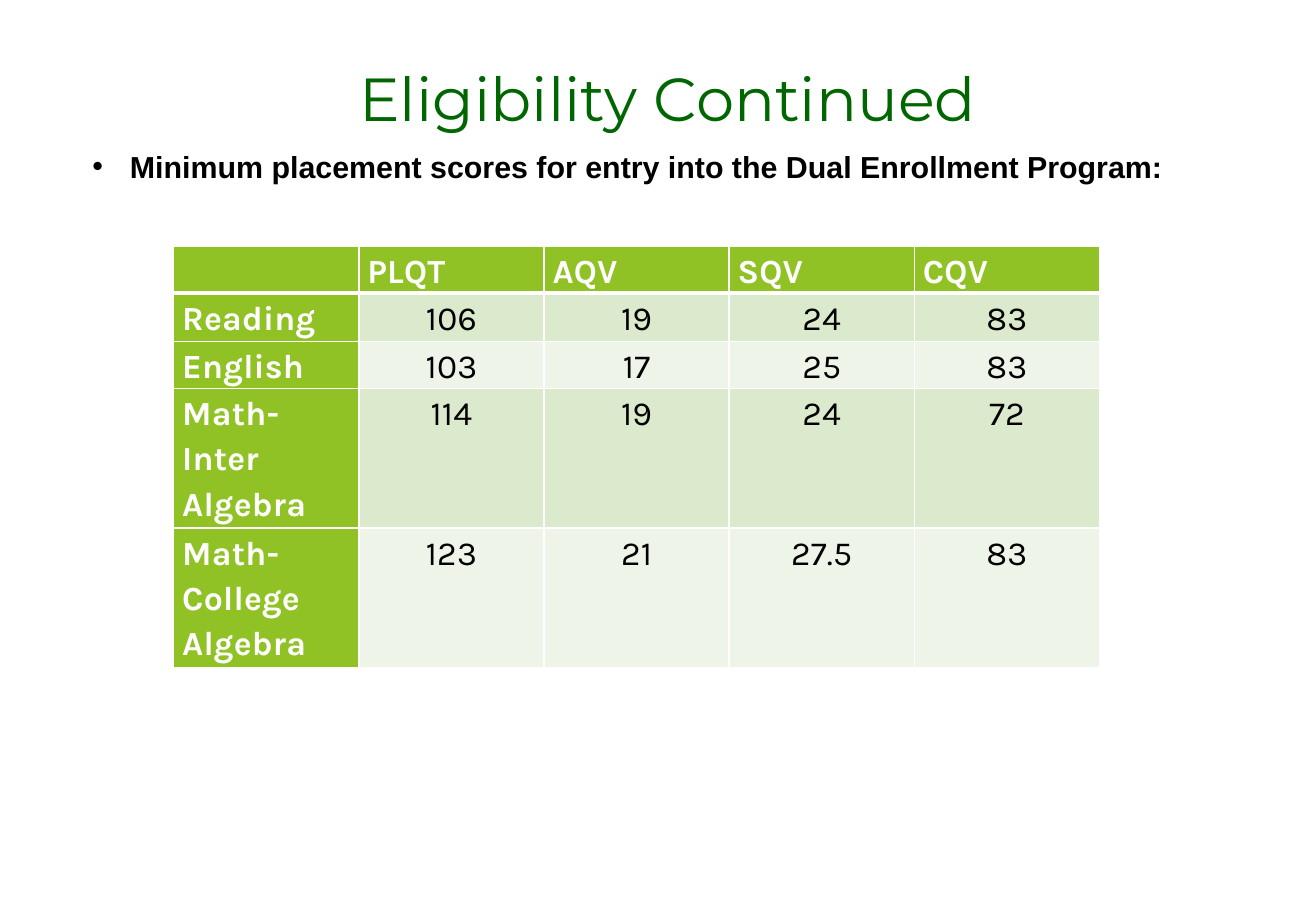
import lxml.etree
import pptx
import pptx.dml.color
import pptx.enum.text
import pptx.oxml.ns
import pptx.util

TITLE = "Eligibility Continued"
BULLET = "Minimum placement scores for entry into the Dual Enrollment Program:"
SCORES = [
    ("", "PLQT", "AQV", "SQV", "CQV"),
    ("Reading", "106", "19", "24", "83"),
    ("English", "103", "17", "25", "83"),
    ("Math-Inter Algebra", "114", "19", "24", "72"),
    ("Math-College Algebra", "123", "21", "27.5", "83"),
]

# Lengths in px, 100 px to the inch
SCALE = 9144
SLIDE_SIZE = (1083, 750)
TITLE_BOX = (238, 45, 623, 71)
BULLET_BOX = (66, 117, 916, 40)
BULLET_INDENT = 31
TABLE_LEFT, TABLE_TOP, TABLE_WIDTH = 143, 203, 762
ROW_HEIGHTS = (34, 40, 34, 81, 102)
CELL_INSET = 7

BLACK = pptx.dml.color.RGBColor(0x00, 0x00, 0x00)
WHITE = pptx.dml.color.RGBColor(0xFF, 0xFF, 0xFF)
TITLE_GREEN = pptx.dml.color.RGBColor(0x00, 0x66, 0x00)
HEADER_GREEN = pptx.dml.color.RGBColor(0x90, 0xC2, 0x26)
BAND_GREENS = (
    pptx.dml.color.RGBColor(0xEE, 0xF4, 0xE8),
    pptx.dml.color.RGBColor(0xDB, 0xE9, 0xCD),
)
ALIGN = pptx.enum.text.PP_ALIGN


def px(length):
    return pptx.util.Emu(round(length * SCALE))


def add_xml(parent, tag, **attributes):
    return lxml.etree.SubElement(parent, pptx.oxml.ns.qn(tag), attributes)


def format_paragraph(paragraph, alignment, font_name, size, color, bold=False):
    paragraph.alignment = alignment
    for run in paragraph.runs:
        run.font.name = font_name
        run.font.size = pptx.util.Pt(size)
        run.font.color.rgb = color
        run.font.bold = bold


def fill_placeholder(placeholder, text, box):
    placeholder.left, placeholder.top, placeholder.width, placeholder.height = map(px, box)
    frame = placeholder.text_frame
    frame.text = text
    frame.auto_size = pptx.enum.text.MSO_AUTO_SIZE.SHAPE_TO_FIT_TEXT
    frame.vertical_anchor = pptx.enum.text.MSO_ANCHOR.TOP
    paragraph = frame.paragraphs[0]
    paragraph.space_before = pptx.util.Pt(0)
    return paragraph


def set_borders(cell, row):
    """White lines of 1 pt, with 3 pt between the header and the first row."""
    widths = {"L": 1, "R": 1, "T": 3 if row == 1 else 1, "B": 3 if row == 0 else 1}
    properties = cell._tc.get_or_add_tcPr()
    for side, width in widths.items():
        line = add_xml(properties, f"a:ln{side}", w=str(pptx.util.Pt(width)))
        add_xml(add_xml(line, "a:solidFill"), "a:srgbClr", val=str(WHITE))


def fill_cell(cell, text, row, column):
    is_header = row == 0 or column == 0
    set_borders(cell, row)
    cell.fill.solid()
    cell.fill.fore_color.rgb = HEADER_GREEN if is_header else BAND_GREENS[row % 2]
    cell.margin_left = cell.margin_right = px(CELL_INSET)
    cell.margin_top = cell.margin_bottom = 0
    cell.text_frame.text = text
    paragraph = cell.text_frame.paragraphs[0]
    paragraph.line_spacing = 1.15
    format_paragraph(
        paragraph,
        ALIGN.LEFT if is_header else ALIGN.CENTER,
        "Karla",
        20,
        WHITE if is_header else BLACK,
        is_header,
    )
    for run in paragraph.runs:
        run.font._element.set("spc", "10")


def add_score_table(slide):
    table = slide.shapes.add_table(
        len(SCORES), len(SCORES[0]),
        px(TABLE_LEFT), px(TABLE_TOP), px(TABLE_WIDTH), px(sum(ROW_HEIGHTS)),
    ).table
    table.first_col = True
    for column in table.columns:
        column.width = px(TABLE_WIDTH / len(SCORES[0]))
    for row, (height, texts) in enumerate(zip(ROW_HEIGHTS, SCORES)):
        table.rows[row].height = px(height)
        for column, text in enumerate(texts):
            fill_cell(table.cell(row, column), text, row, column)


def main():
    presentation = pptx.Presentation()
    presentation.slide_width, presentation.slide_height = map(px, SLIDE_SIZE)
    slide = presentation.slides.add_slide(presentation.slide_layouts[1])

    title = fill_placeholder(slide.shapes.title, TITLE, TITLE_BOX)
    format_paragraph(title, ALIGN.CENTER, "Montserrat", 36, TITLE_GREEN)

    bullet = fill_placeholder(slide.placeholders[1], BULLET, BULLET_BOX)
    format_paragraph(bullet, ALIGN.LEFT, "Arial", 18, BLACK, True)
    properties = bullet._p.get_or_add_pPr()
    properties.set("marL", str(px(BULLET_INDENT)))
    properties.set("indent", str(px(-BULLET_INDENT)))
    add_xml(properties, "a:buChar", char="•")

    add_score_table(slide)
    presentation.save("out.pptx")


if __name__ == "__main__":
    main()
